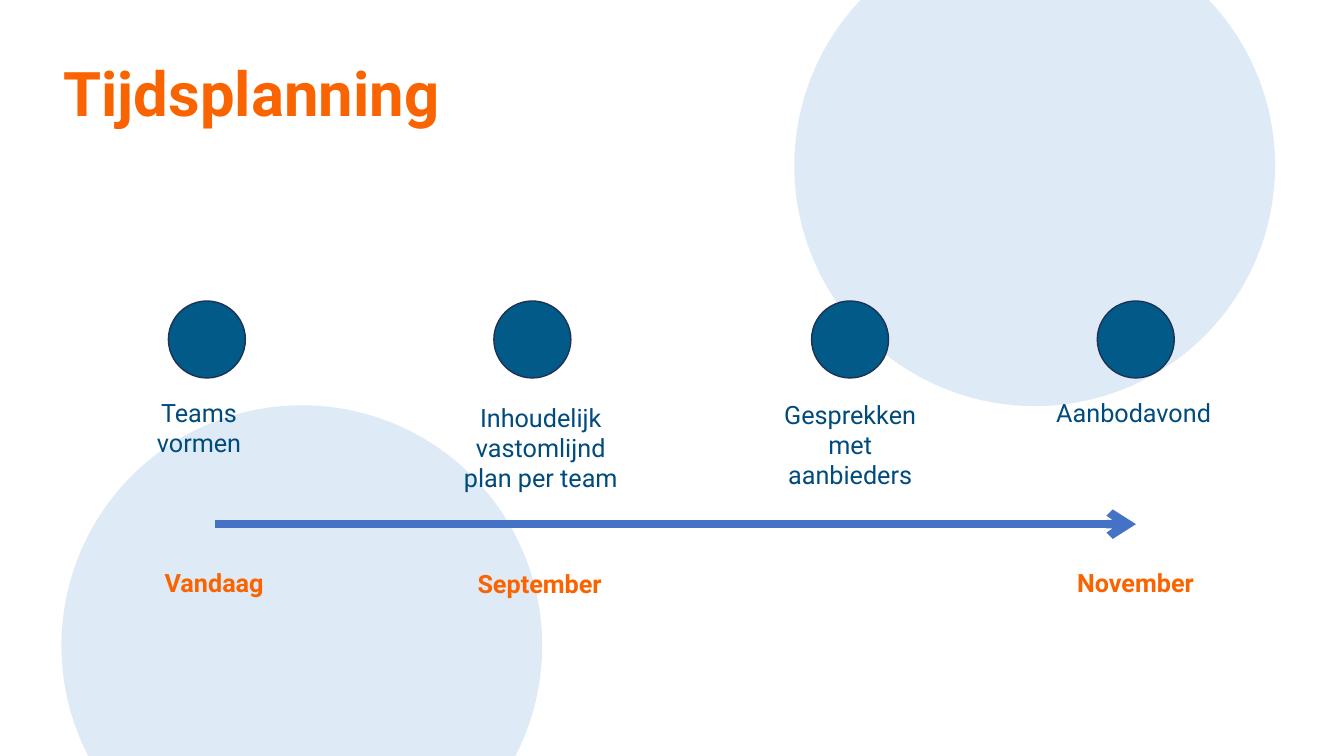
from pptx import Presentation
from pptx.dml.color import RGBColor
from pptx.enum.shapes import MSO_CONNECTOR, MSO_SHAPE
from pptx.enum.text import MSO_ANCHOR, MSO_AUTO_SIZE, PP_ALIGN
from pptx.oxml.ns import qn
from pptx.util import Pt
from lxml.etree import SubElement

ORANGE, NAVY, BLUE = "FA6400", "004B7D", "4472C4"
PALE, TEAL, OUTLINE = "DEEBF7", "015A87", "1E3256"


def color(value):
    """Turn a hex string into a colour."""
    return RGBColor.from_string(value)


class TimelineSlide:
    """Holds the style and the current slide."""

    font = "Roboto"
    text_size = 18
    title_size = 44

    def __init__(self, presentation):
        """Add a title-only slide."""
        self.slide = presentation.slides.add_slide(presentation.slide_layouts[5])

    def add_text(self, paragraph, text, size, ink, bold, align):
        """Add one formatted run to a paragraph."""
        paragraph.alignment = align
        run = paragraph.add_run()
        run.text = text
        run.font.name = self.font
        run.font.size = Pt(size)
        run.font.bold = bold
        run.font.color.rgb = color(ink)

    def title(self, text, left, top, width, height):
        """Place the title in front of the shapes drawn so far."""
        shape = self.slide.shapes.title
        shape.element.getparent().append(shape.element)
        shape.left, shape.top, shape.width, shape.height = map(Pt, (left, top, width, height))
        frame = shape.text_frame
        frame.word_wrap = True
        frame.auto_size = MSO_AUTO_SIZE.NONE
        frame.vertical_anchor = MSO_ANCHOR.BOTTOM
        frame.margin_left = frame.margin_right = Pt(3.6)
        frame.margin_top = frame.margin_bottom = Pt(3.6)
        paragraph = frame.paragraphs[0]
        paragraph.line_spacing = 0.9
        self.add_text(paragraph, text, self.title_size, ORANGE, True, PP_ALIGN.LEFT)

    def circle(self, kind, left, top, size, fill, line=None):
        """Draw a filled circle with an optional outline."""
        shape = self.slide.shapes.add_shape(kind, Pt(left), Pt(top), Pt(size), Pt(size))
        shape.shadow.inherit = False
        shape.fill.solid()
        shape.fill.fore_color.rgb = color(fill)
        if line:
            shape.line.color.rgb = color(line)
            shape.line.width = Pt(1)
        else:
            shape.line.fill.background()

    def label(self, text, left, top, width, height, ink, bold=False, align=PP_ALIGN.CENTER):
        """Add a wrapping text box."""
        box = self.slide.shapes.add_textbox(Pt(left), Pt(top), Pt(width), Pt(height))
        frame = box.text_frame
        frame.word_wrap = True
        frame.auto_size = MSO_AUTO_SIZE.SHAPE_TO_FIT_TEXT
        self.add_text(frame.paragraphs[0], text, self.text_size, ink, bold, align)

    def arrow(self, start, end, top, ink, width):
        """Draw a horizontal arrow."""
        connector = self.slide.shapes.add_connector(
            MSO_CONNECTOR.STRAIGHT, Pt(start), Pt(top), Pt(end), Pt(top))
        connector.line.color.rgb = color(ink)
        connector.line.width = Pt(width)
        properties = connector.element.spPr
        SubElement(properties.find(qn("a:ln")), qn("a:tailEnd"), type="arrow")
        SubElement(properties, qn("a:effectLst"))


def main():
    """Build the timeline slide."""
    presentation = Presentation()
    presentation.slide_width, presentation.slide_height = Pt(960), Pt(540)
    timeline = TimelineSlide(presentation)

    for left, top in ((567.4, -53.3), (43.9, 289.5)):
        timeline.circle(MSO_SHAPE.OVAL, left, top, 343.4, PALE)
    timeline.title("Tijdsplanning", 41.8, 41.8, 843.1, 54.7)

    for left in (120.3, 352.8, 579.7, 783.8):
        timeline.circle(MSO_SHAPE.FLOWCHART_CONNECTOR, left, 215, 55, TEAL, OUTLINE)

    steps = (
        ("Teams vormen", 78.5, 280.1, 127.4, 51, PP_ALIGN.CENTER),
        ("Inhoudelijk vastomlijnd plan per team", 316.8, 283.7, 139, 72.7, PP_ALIGN.CENTER),
        ("Gesprekken met aanbieders", 543.6, 281.5, 127.4, 72.7, PP_ALIGN.CENTER),
        ("Aanbodavond", 747.4, 280.1, 127.4, 29, PP_ALIGN.LEFT),
    )
    for text, left, top, width, height, align in steps:
        timeline.label(text, left, top, width, height, NAVY, align=align)

    timeline.arrow(153.4, 811.4, 374.4, BLUE, 6)

    dates = (("Vandaag", 89.3, 401.8), ("September", 321.8, 402.5), ("November", 747.4, 401.8))
    for text, left, top in dates:
        timeline.label(text, left, top, 127.4, 29, ORANGE, bold=True)

    presentation.save("out.pptx")


if __name__ == "__main__":
    main()
